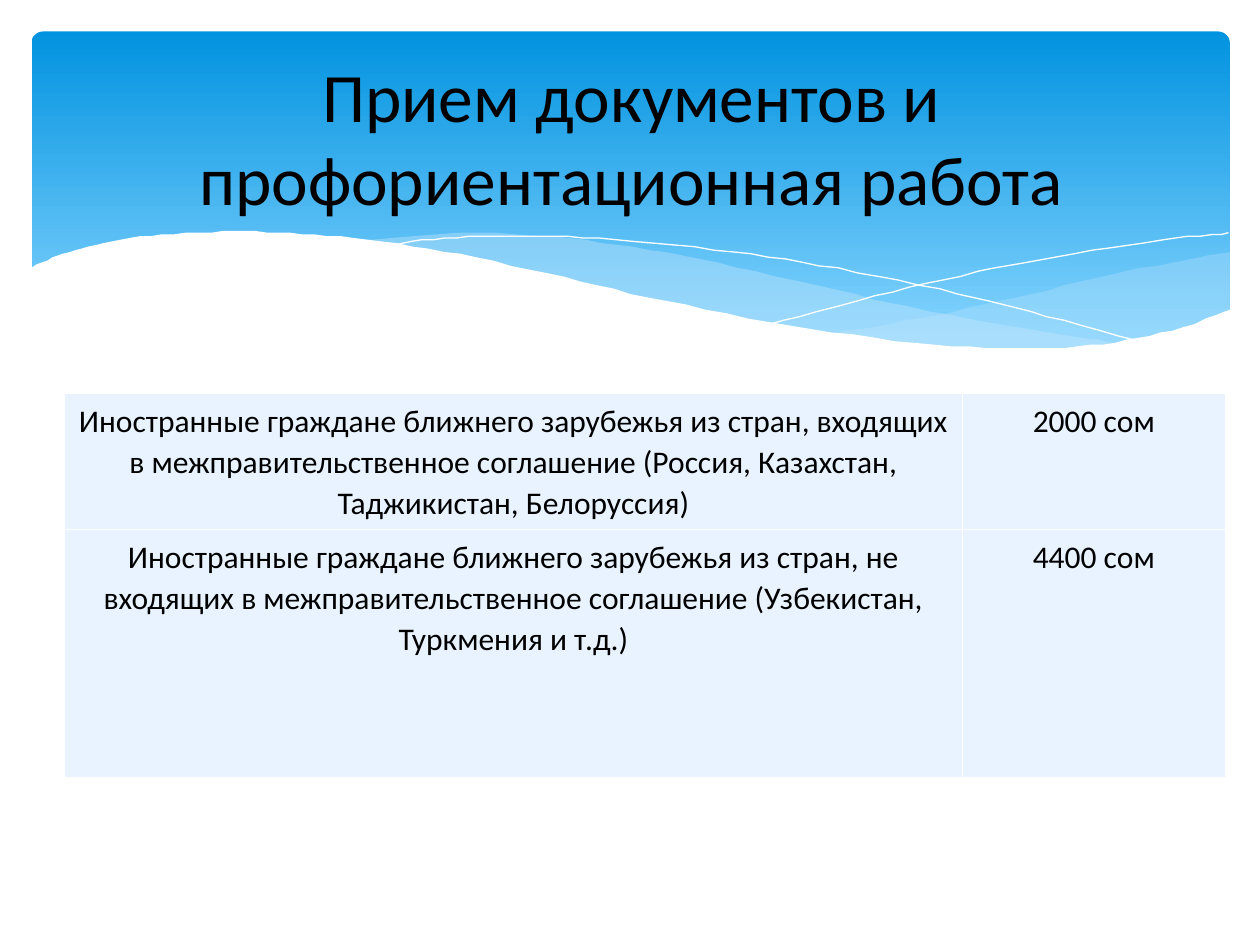
from lxml.etree import SubElement
from pptx import Presentation
from pptx.dml.color import RGBColor
from pptx.enum.shapes import MSO_SHAPE
from pptx.enum.text import MSO_ANCHOR, MSO_AUTO_SIZE, PP_ALIGN
from pptx.oxml.ns import qn
from pptx.util import Pt

WHITE, PALE_BLUE, WAVE_BLUE = "FFFFFF", "E8F3FF", "C6E7FC"

# Wave curves: points that each smooth curve passes through, in points
RIGHT_WAVE = [
    [(702.7, 144), (652, 153.4), (599, 165.6), (542, 178.6), (476, 190.8)],
    [(476, 190.8), (518, 195.8), (554, 199.4), (593, 199.4), (634, 196.6),
     (668, 189.4), (702.7, 177.8)],
]
MIDDLE_WAVE = [
    [(643, 196.6), (581, 187.2), (508, 172.8), (453, 159.8), (389.5, 146.2),
     (334.8, 137.5), (273.6, 133.2), (206, 137.5)],
    [(206, 137.5), (260.6, 146.2), (323.3, 159.8), (407.5, 178.6),
     (478.8, 191.5), (538.6, 198.7), (589, 200.2), (643, 196.6)],
]
FALLING_LINE = [(222.5, 140.4), (254, 136.1), (299.5, 134.6), (352, 136.8),
                (419, 144), (478.8, 153.4), (547, 167.8), (598, 180.7),
                (653, 195.8)]
RISING_LINE = [(441.4, 185), (500.4, 169.2), (558.7, 155.5), (623.5, 143.3),
               (665.3, 136.8), (702, 133.2)]
WHITE_WAVE = [
    [(703.4, 177.1), (669.6, 188.6), (630, 196.6), (582.5, 199.4),
     (522.7, 195.8), (450.7, 185.8), (380.9, 172.1), (321.8, 158.4),
     (262.8, 145.4), (210.2, 136.8), (165.6, 133.2), (127.4, 132.5),
     (85.7, 134.6), (54.7, 140.4), (33.1, 146.2), (16.6, 153.4)],
    [(16.6, 236.9), (703.4, 236.9)],
]

FEES = [
    ("Иностранные граждане ближнего зарубежья из стран, входящих в "
     "межправительственное соглашение (Россия, Казахстан, Таджикистан, "
     "Белоруссия)", "2000 сом"),
    ("Иностранные граждане ближнего зарубежья из стран, не входящих в "
     "межправительственное соглашение (Узбекистан, Туркмения и т.д.)",
     "4400 сом"),
]


def rgb(code):
    return RGBColor.from_string(code)


def write(frame, text, size=18, color="000000", font="Calibri",
          align=PP_ALIGN.CENTER, spacing=1.0):
    frame.word_wrap = True
    paragraph = frame.paragraphs[0]
    paragraph.alignment = align
    paragraph.line_spacing = spacing
    run = paragraph.add_run()
    run.text = text
    run.font.size = Pt(size)
    run.font.name = font
    run.font.color.rgb = rgb(color)


def smooth(knots, steps=6):
    """Catmull-Rom curve through the knots."""
    padded = [knots[0], *knots, knots[-1]]
    curve = [knots[0]]
    for a, b, c, d in zip(padded, padded[1:], padded[2:], padded[3:]):
        for step in range(1, steps + 1):
            t = step / steps
            curve.append(tuple(
                0.5 * (2 * q + (r - p) * t + (2 * p - 5 * q + 4 * r - s) * t**2
                       + (3 * q - p - 3 * r + s) * t**3)
                for p, q, r, s in zip(a, b, c, d)))
    return curve


def add_outline(slide, curves, closed):
    points = [point for knots in curves for point in smooth(knots)]
    builder = slide.shapes.build_freeform(*points[0], scale=Pt(1))
    builder.add_line_segments(points[1:], close=closed)
    outline = builder.convert_to_shape()
    outline.shadow.inherit = False
    return outline


def add_wave(slide, curves, color, opacity=100):
    wave = add_outline(slide, curves, closed=True)
    wave.fill.solid()
    wave.fill.fore_color.rgb = rgb(color)
    wave.line.fill.background()
    if opacity < 100:
        tint = wave.fill._xPr.find(qn("a:solidFill"))[0]
        SubElement(tint, qn("a:alpha"), val=str(opacity * 1000))


def add_curve(slide, knots):
    curve = add_outline(slide, [knots], closed=False)
    curve.fill.background()
    curve.line.color.rgb = rgb(WHITE)
    curve.line.width = Pt(0)


def add_banner(slide):
    banner = slide.shapes.add_shape(MSO_SHAPE.ROUNDED_RECTANGLE,
                                    Pt(18), Pt(18), Pt(684.7), Pt(194.4))
    banner.adjustments[0] = 0.034
    banner.shadow.inherit = False
    banner.line.fill.background()
    banner.fill.gradient()
    banner.fill.gradient_angle = 270
    stops = [(0, "0293E0"), (0.9, "83D3FE")]
    for stop, (position, color) in zip(banner.fill.gradient_stops, stops):
        stop.position = position
        stop.color.rgb = rgb(color)


def set_borders(cell, color, width):
    properties = cell._tc.get_or_add_tcPr()
    for side in ("lnL", "lnR", "lnT", "lnB"):
        line = SubElement(properties, qn(f"a:{side}"), w=str(Pt(width)))
        SubElement(SubElement(line, qn("a:solidFill")), qn("a:srgbClr"),
                   val=color)


def add_fee_table(slide):
    widths, heights = (513.2, 150.2), (54.7, 141.9)
    fees = slide.shapes.add_table(len(heights), len(widths), Pt(36.8),
                                  Pt(224.8), Pt(sum(widths)),
                                  Pt(sum(heights))).table
    fees.first_row = fees.horz_banding = False
    for column, width in zip(fees.columns, widths):
        column.width = Pt(width)
    for row, height, texts in zip(fees.rows, heights, FEES):
        row.height = Pt(height)
        for cell, text in zip(row.cells, texts):
            set_borders(cell, WHITE, 1)
            cell.fill.solid()
            cell.fill.fore_color.rgb = rgb(PALE_BLUE)
            write(cell.text_frame, text, spacing=1.07)


def place_title(slide, text):
    title = slide.shapes.title
    title.left, title.top = Pt(36.8), Pt(49)
    title.width, title.height = Pt(648), Pt(98.6)
    frame = title.text_frame
    frame.auto_size = MSO_AUTO_SIZE.NONE
    frame.vertical_anchor = MSO_ANCHOR.MIDDLE
    frame.margin_bottom = Pt(44.6)
    write(frame, text, size=39.6)
    # Bring the title in front of the banner
    slide.shapes._spTree.append(title._element)


def main():
    deck = Presentation()
    deck.slide_width, deck.slide_height = Pt(720), Pt(540)
    slide = deck.slides.add_slide(deck.slide_layouts[5])

    # Banner with waves
    add_banner(slide)
    add_wave(slide, RIGHT_WAVE, WAVE_BLUE, opacity=29)
    add_wave(slide, MIDDLE_WAVE, WAVE_BLUE, opacity=40)
    add_curve(slide, FALLING_LINE)
    add_curve(slide, RISING_LINE)
    add_wave(slide, WHITE_WAVE, WHITE)

    # Content
    add_fee_table(slide)
    place_title(slide, "Прием документов и профориентационная работа")
    deck.save("out.pptx")


if __name__ == "__main__":
    main()
